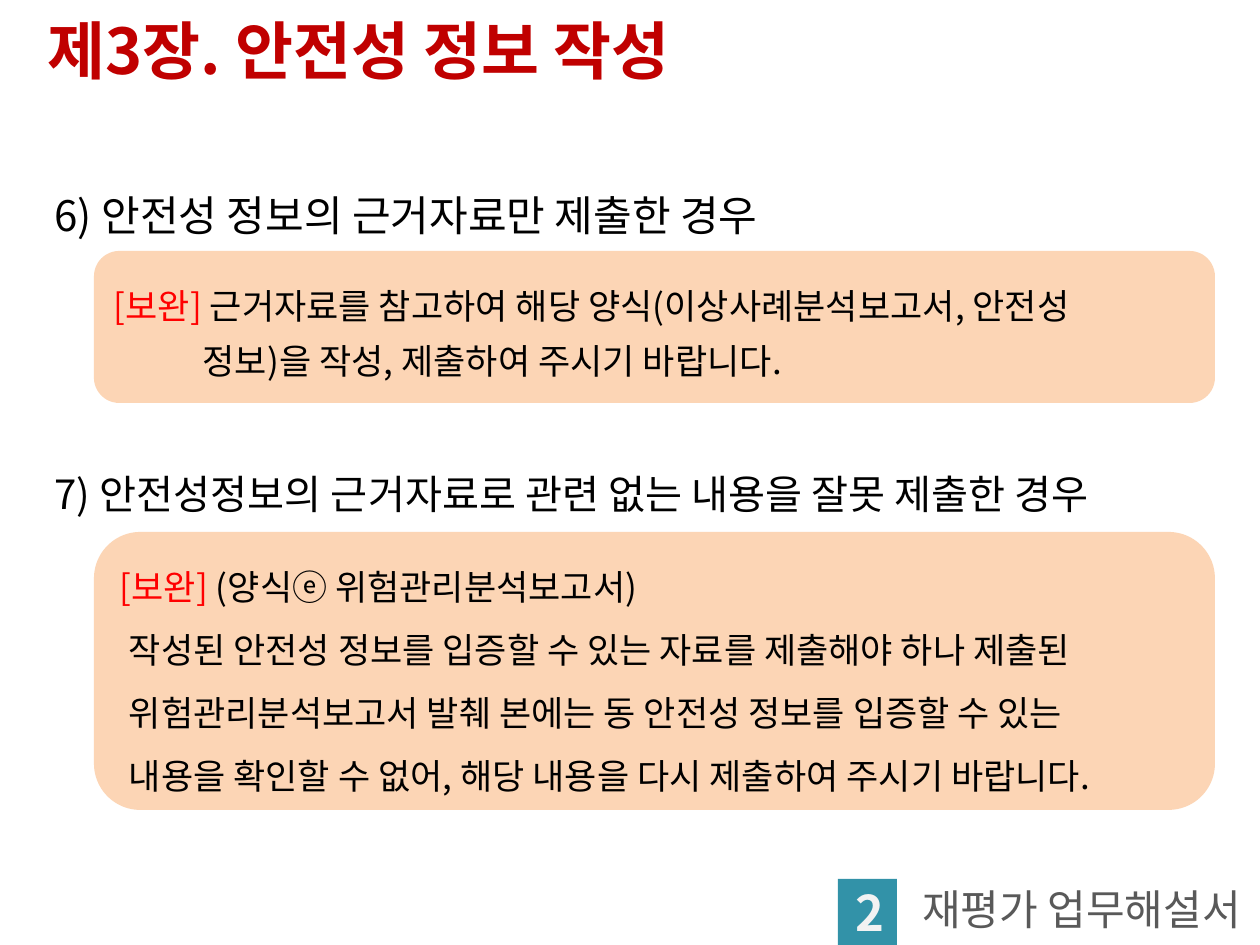
"""Build the slide on chapter 3, writing safety information."""
from dataclasses import dataclass

from lxml.etree import SubElement
from pptx import Presentation
from pptx.dml.color import RGBColor
from pptx.enum.shapes import MSO_SHAPE
from pptx.enum.text import MSO_ANCHOR, PP_ALIGN
from pptx.oxml.ns import qn
from pptx.util import Emu, Pt


@dataclass(frozen=True)
class Theme:
    font: str = "Noto Sans CJK KR"
    title: str = "C00000"
    text: str = "000000"
    label: str = "FF0000"
    panel: str = "FCD5B5"
    badge: str = "3292A8"
    badge_text: str = "F2F2F2"
    footer: str = "595959"
    title_size: int = 36
    badge_size: int = 28
    footer_size: int = 24
    body_size: int = 20


THEME = Theme()
TITLE = "제3장. 안전성 정보 작성"
FOOTER = "재평가 업무해설서"
PAGE = "2"
LABEL = "[보완] "
CASES = [
    {
        "heading": "6) 안전성 정보의 근거자료만 제출한 경우",
        "heading_size": 24, "heading_box": (39, 173, 1162, 69),
        "panel_box": (94, 251, 1121, 152),
        "lines": ["근거자료를 참고하여 해당 양식(이상사례분석보고서, 안전성",
                  "정보)을 작성, 제출하여 주시기 바랍니다."],
        "indent": 89, "spacing": 1.3, "align": PP_ALIGN.LEFT,
    },
    {
        "heading": "7) 안전성정보의 근거자료로 관련 없는 내용을 잘못 제출한 경우",
        "heading_size": 23, "heading_box": (39, 452, 1187, 69),
        "panel_box": (94, 532, 1121, 278),
        "lines": ["(양식ⓔ 위험관리분석보고서)",
                  "작성된 안전성 정보를 입증할 수 있는 자료를 제출해야 하나 제출된",
                  "위험관리분석보고서 발췌 본에는 동 안전성 정보를 입증할 수 있는",
                  "내용을 확인할 수 없어, 해당 내용을 다시 제출하여 주시기 바랍니다."],
        "indent": 9, "spacing": 1.5, "align": PP_ALIGN.JUSTIFY,
    },
]


def px(length):
    return Emu(round(length * 914400 / 126))


def place(part, box):
    part.left, part.top, part.width, part.height = map(px, box)


def format_run(run, size, color, bold=False):
    run.font.size, run.font.bold, run.font.name = Pt(size), bold, THEME.font
    run.font.color.rgb = RGBColor.from_string(color)
    SubElement(run.font._element, qn("a:ea"), typeface=THEME.font)


def format_paragraph(paragraph, align, spacing=1.0, indent=0, hanging=0):
    paragraph.alignment, paragraph.line_spacing = align, spacing
    properties = paragraph._p.get_or_add_pPr()
    properties.set("marL", str(px(indent)))
    properties.set("indent", str(-px(hanging)))


def write_line(frame, text, size, color, align, bold=False, **layout):
    frame.word_wrap = True
    frame.text = text
    format_paragraph(frame.paragraphs[0], align, **layout)
    format_run(frame.paragraphs[0].runs[0], size, color, bold)


def add_block(slide, kind, box, fill=None):
    block = slide.shapes.add_shape(kind, *map(px, box))
    block.shadow.inherit = False
    block.line.fill.background()
    if fill:
        block.fill.solid()
        block.fill.fore_color.rgb = RGBColor.from_string(fill)
    else:
        block.fill.background()
    block.text_frame.vertical_anchor = MSO_ANCHOR.MIDDLE
    return block.text_frame


def add_case(slide, case):
    heading = add_block(slide, MSO_SHAPE.ROUNDED_RECTANGLE, case["heading_box"])
    write_line(heading, case["heading"], case["heading_size"], THEME.text,
               PP_ALIGN.LEFT, spacing=1.3, indent=63, hanging=63)
    panel = add_block(slide, MSO_SHAPE.ROUNDED_RECTANGLE, case["panel_box"], THEME.panel)
    panel.word_wrap = True
    for number, line in enumerate(case["lines"]):
        paragraph = panel.add_paragraph() if number else panel.paragraphs[0]
        format_paragraph(paragraph, case["align"], case["spacing"],
                         case["indent"] if number else 0)
        parts = [(line, THEME.text)]
        if number == 0:
            parts.insert(0, (LABEL, THEME.label))
        for text, color in parts:
            run = paragraph.add_run()
            run.text = text
            format_run(run, THEME.body_size, color)


def main():
    deck = Presentation()
    deck.slide_width, deck.slide_height = px(1260), px(945)
    slide = deck.slides.add_slide(deck.slide_layouts[5])

    title = slide.shapes.title
    place(title, (35, 14, 1250, 82))
    title.text_frame.vertical_anchor = MSO_ANCHOR.TOP
    write_line(title.text_frame, TITLE, THEME.title_size, THEME.title,
               PP_ALIGN.LEFT, bold=True, spacing=0.9)

    for case in CASES:
        add_case(slide, case)

    footer = slide.shapes.add_textbox(*map(px, (888, 883, 387, 58)))
    write_line(footer.text_frame, FOOTER, THEME.footer_size, THEME.footer,
               PP_ALIGN.CENTER, spacing=0.9)
    badge = add_block(slide, MSO_SHAPE.RECTANGLE, (838, 879, 59, 66), THEME.badge)
    write_line(badge, PAGE, THEME.badge_size, THEME.badge_text,
               PP_ALIGN.RIGHT, bold=True)
    deck.save("out.pptx")


if __name__ == "__main__":
    main()
